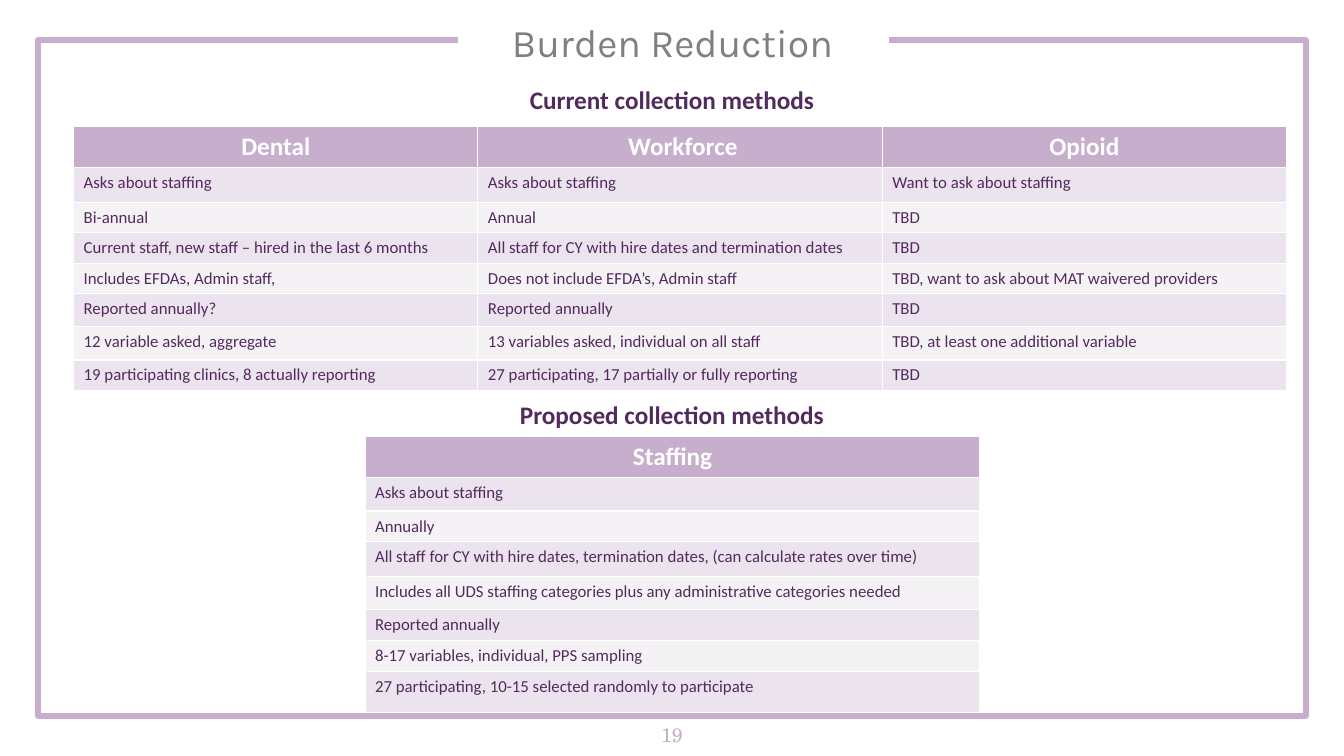
"""Build the Burden Reduction slide: current and proposed collection methods."""
from pptx import Presentation
from pptx.dml.color import RGBColor
from pptx.enum import text as t
from pptx.util import Inches, Pt

HUES = {"lilac": "C8AECD", "plum": "522B5D", "grey": "808080",
        "white": "FFFFFF", "dark": "EBE3ED", "light": "F5F2F6"}


def style(frame, size, hue, bold=False, face="Calibri", align=t.PP_ALIGN.CENTER):
    para = frame.paragraphs[0]
    para.alignment = align
    font = para.runs[0].font
    font.size, font.bold, font.name = Pt(size), bold, face
    font.color.rgb = RGBColor.from_string(HUES[hue])


def label(words, left, top, width, height):
    box = slide.shapes.add_textbox(Inches(left), Inches(top), Inches(width), Inches(height))
    box.text_frame.word_wrap = True
    box.text_frame.text = words
    return box.text_frame


prs = Presentation()
prs.slide_width, prs.slide_height = Inches(13.33), Inches(7.5)
slide = prs.slides.add_slide(prs.slide_layouts[5])

pen = slide.shapes.build_freeform(Inches(4.54), Inches(0.4))
corners = [(0.38, 0.4), (0.38, 7.1), (12.95, 7.1), (12.95, 0.4), (8.82, 0.4)]
pen.add_line_segments([(Inches(x), Inches(y)) for x, y in corners], close=False)
border = pen.convert_to_shape()
border.shadow.inherit = False
border.fill.background()
border.line.color.rgb = RGBColor.from_string(HUES["lilac"])
border.line.width = Pt(4.25)

number = label("19", 0, 6.7, 13.33, 1.17)
number.vertical_anchor = t.MSO_ANCHOR.MIDDLE
style(number, 14, "lilac", face="TeX Gyre Schola")

title = slide.shapes.title
title.left, title.top = Inches(4.73), Inches(0.13)
title.width, title.height = Inches(3.88), Inches(1.07)
head = title.text_frame
head.text = "Burden Reduction"
head.auto_size = t.MSO_AUTO_SIZE.NONE
head.vertical_anchor = t.MSO_ANCHOR.TOP
head.margin_left = head.margin_right = head.margin_top = head.margin_bottom = Inches(0.1)
head.paragraphs[0].line_spacing = 0.9
style(head, 28, "grey", face="Karla")

current = [
    ("Dental", " Workforce", "Opioid"),
    ("Asks about staffing", "Asks about staffing", "Want to ask about staffing"),
    ("Bi-annual", "Annual", "TBD"),
    ("Current staff, new staff – hired in the last 6 months",
     "All staff for CY with hire dates and termination dates", "TBD"),
    ("Includes EFDAs, Admin staff,", "Does not include EFDA’s, Admin staff",
     "TBD, want to ask about MAT waivered providers"),
    ("Reported annually?", "Reported annually", "TBD"),
    ("12 variable asked, aggregate", "13 variables asked, individual on all staff",
     "TBD, at least one additional variable"),
    ("19 participating clinics, 8 actually reporting",
     "27 participating, 17 partially or fully reporting", "TBD"),
]
proposed = [
    ("Staffing",),
    ("Asks about staffing",),
    ("Annually",),
    ("All staff for CY with hire dates, termination dates, (can calculate rates over time)",),
    ("Includes all UDS staffing categories plus any administrative categories needed",),
    ("Reported annually",),
    ("8-17 variables, individual, PPS sampling",),
    ("27 participating, 10-15 selected randomly to participate",),
]
grids = [
    (current, 0.73, 1.25, 4.01, [0.41, 0.35, 0.24, 0.29, 0.3, 0.33, 0.33, 0.14]),
    (proposed, 3.62, 4.33, 6.1, [0.41, 0.33, 0.22, 0.35, 0.33, 0.28, 0.31, 0.41]),
]
for rows, left, top, width, heights in grids:
    count = len(rows[0])
    table = slide.shapes.add_table(len(rows), count, Inches(left), Inches(top),
                                   Inches(width * count), Inches(sum(heights))).table
    for col in table.columns:
        col.width = Inches(width)
    for r, (row, height) in enumerate(zip(rows, heights)):
        table.rows[r].height = Inches(height)
        for c, words in enumerate(row):
            cell = table.cell(r, c)
            cell.text_frame.text = words
            cell.fill.solid()
            shade = "lilac" if r == 0 else "dark" if r % 2 else "light"
            cell.fill.fore_color.rgb = RGBColor.from_string(HUES[shade])
            if r == 0:
                style(cell.text_frame, 18, "white", bold=True)
            else:
                style(cell.text_frame, 12, "plum", align=t.PP_ALIGN.LEFT)

for words, top in [("Current collection methods", 0.79), ("Proposed collection methods", 3.91)]:
    style(label(words, 3.86, top, 5.61, 0.42), 18, "plum", bold=True)

prs.save("out.pptx")
